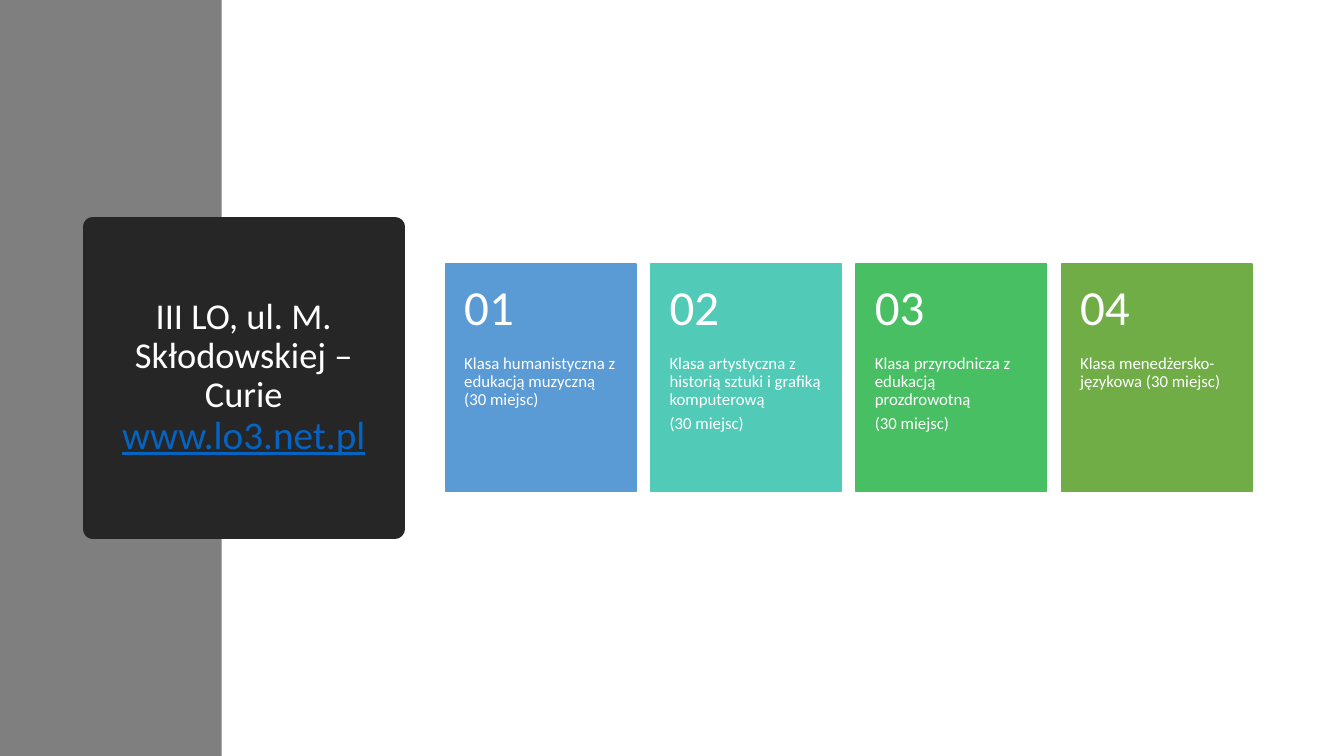
from pptx import Presentation
from pptx.dml.color import RGBColor as RGB
from pptx.enum.shapes import MSO_SHAPE as Shape
from pptx.enum.text import MSO_ANCHOR as Anchor, PP_ALIGN as Align
from pptx.util import Pt

FONT = "Calibri"
WHITE = RGB(0xFF, 0xFF, 0xFF)
GRAY = RGB(0x7F, 0x7F, 0x7F)
DARK = RGB(0x26, 0x26, 0x26)
LINK = RGB(0x05, 0x63, 0xC1)
BLUE = RGB(0x5B, 0x9B, 0xD5)
TEAL = RGB(0x52, 0xCA, 0xB8)
GREEN = RGB(0x49, 0xBF, 0x64)
OLIVE = RGB(0x70, 0xAD, 0x47)

CARDS = [
    (BLUE, ["Klasa humanistyczna z edukacją muzyczną (30 miejsc)"]),
    (TEAL, ["Klasa artystyczna z historią sztuki i grafiką komputerową",
            "(30 miejsc)"]),
    (GREEN, ["Klasa przyrodnicza z edukacją prozdrowotną", "(30 miejsc)"]),
    (OLIVE, ["Klasa menedżersko-językowa (30 miejsc)"]),
]
LEFT, TOP, STEP = 318.2, 188.6, 146.65
WIDTH, HEIGHT, HEAD = 136.2, 162.7, 65
SIDE = 13.4


def add_rect(slide, x, y, w, h, color, line=0):
    rect = slide.shapes.add_shape(Shape.RECTANGLE, Pt(x), Pt(y), Pt(w), Pt(h))
    rect.shadow.inherit = False
    rect.fill.solid()
    rect.fill.fore_color.rgb = color
    if line:
        rect.line.color.rgb = color
        rect.line.width = Pt(line)
    else:
        rect.line.fill.background()
    return rect


def add_run(para, text, size, color=WHITE):
    run = para.add_run()
    run.text = text
    font = run.font
    font.name, font.size = FONT, Pt(size)
    font.color.rgb = color
    return run


def add_text(slide, y, x, h, lines, size, anchor, above, below):
    """Add a card's text box; above and below are its vertical insets."""
    box = slide.shapes.add_textbox(Pt(x), Pt(y), Pt(WIDTH), Pt(h))
    frame = box.text_frame
    frame.word_wrap = True
    frame.vertical_anchor = anchor
    frame.margin_left = frame.margin_right = Pt(SIDE)
    frame.margin_top, frame.margin_bottom = Pt(above), Pt(below)
    for i, line in enumerate(lines):
        para = frame.add_paragraph() if i else frame.paragraphs[0]
        para.line_spacing = 0.9
        para.space_after = Pt(0.35 * size)
        add_run(para, line, size)


def add_card(slide, index, color, lines):
    x = LEFT + index * STEP
    add_rect(slide, x, TOP, WIDTH, HEIGHT, color, 1)
    add_text(slide, TOP + HEAD, x, HEIGHT - HEAD, lines, 12,
             Anchor.TOP, 0, 26)
    add_text(slide, TOP, x, HEAD, [f"{index + 1:02}"], 35,
             Anchor.MIDDLE, 13, 13)


def add_title(slide):
    frame = add_rect(slide, 66.2, 162, 216, 216, DARK, 13.75).text_frame
    frame.word_wrap = True
    frame.vertical_anchor = Anchor.MIDDLE
    para = frame.paragraphs[0]
    para.alignment = Align.CENTER
    para.line_spacing = 0.9
    add_run(para, "III LO, ul. M. Skłodowskiej –Curie", 26)
    para.add_line_break()
    add_run(para, "www.lo3.net.pl", 28, LINK).font.underline = True


def main():
    deck = Presentation()
    deck.slide_width, deck.slide_height = Pt(960), Pt(540)
    slide = deck.slides.add_slide(deck.slide_layouts[6])
    add_rect(slide, 0, 0, 158.4, 540, GRAY)
    add_title(slide)
    for index, (color, lines) in enumerate(CARDS):
        add_card(slide, index, color, lines)
    deck.save("out.pptx")


if __name__ == "__main__":
    main()
